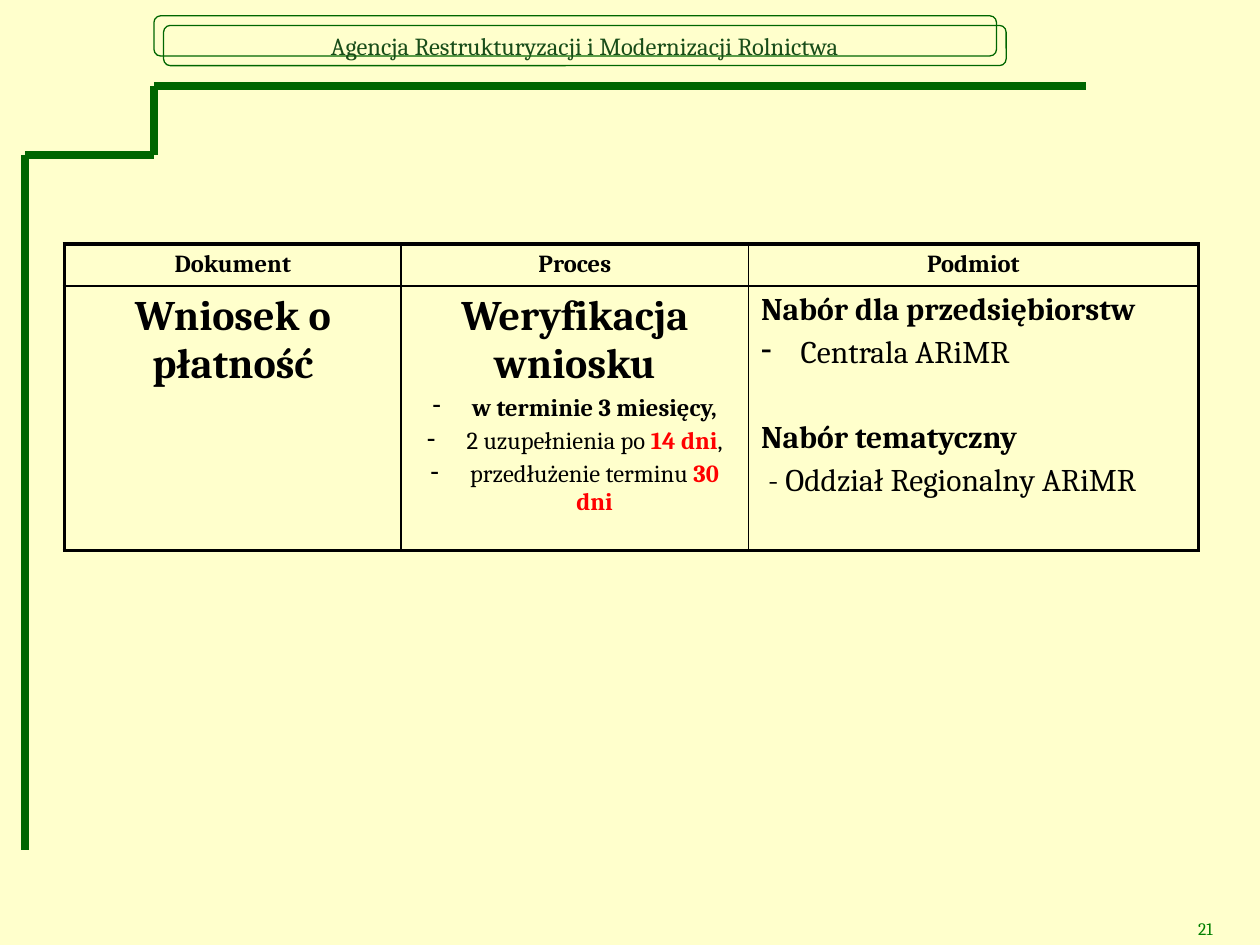
"""Builds the payment application slide with its process table."""
import pptx
import pptx.dml.color
import pptx.enum.shapes
import pptx.enum.text
import pptx.oxml
import pptx.oxml.ns
import pptx.util

Pt = pptx.util.Pt
ALIGN = pptx.enum.text.PP_ALIGN
FONT = "Cambria"
GREEN, BLACK, RED = "006600", "000000", "FF0000"

AGENCY = "Agencja Restrukturyzacji i Modernizacji Rolnictwa"
PAGE_NUMBER = "21"
FRAME_LINES = [
    (88, 49, 620.5, 49),
    (14.5, 88.5, 14.5, 485.5),
    (14.5, 88.5, 88, 88.5),
    (88, 88.5, 88, 49),
]
BANNERS = [(88, 9, ""), (93.5, 14.5, AGENCY)]
BANNER_SIZE = (481.5, 23)

TABLE_PLACE = (36.8, 139.5)
COLUMN_WIDTHS = [192.5, 198.5, 257]
ROW_HEIGHTS = [24, 151]
OUTER_BORDER, INNER_BORDER = 2.25, 1
HEADINGS = ["Dokument", "Proces", "Podmiot"]


def entry(size, *spans, align=ALIGN.CENTER, bullet=False, indent=0, gap=0.2):
    """Describe a paragraph; spans are (text, bold, colour), gap is in font sizes."""
    return dict(size=size, spans=spans, align=align, bullet=bullet, indent=indent, gap=gap)


DETAILS = [
    [entry(24, ("Wniosek o płatność", True, BLACK))],
    [
        entry(24, ("Weryfikacja wniosku", True, BLACK)),
        entry(14, ("w terminie 3 miesięcy,", True, BLACK), bullet=True),
        entry(14, ("2 uzupełnienia po ", False, BLACK), ("14 dni", True, RED),
              (",", False, BLACK), bullet=True),
        entry(14, ("przedłużenie terminu ", False, BLACK), ("30 dni", True, RED), bullet=True),
    ],
    [
        entry(18, ("Nabór dla przedsiębiorstw", True, BLACK), align=ALIGN.LEFT),
        entry(18, ("Centrala ARiMR", False, BLACK), align=ALIGN.LEFT, bullet=True),
        entry(18, ("Nabór tematyczny", True, BLACK), align=ALIGN.LEFT, gap=1.55),
        entry(18, ("- Oddział Regionalny ARiMR", False, BLACK), align=ALIGN.LEFT, indent=4),
    ],
]
ROWS = [[[entry(14, (heading, True, BLACK))] for heading in HEADINGS], DETAILS]


def colour(hex_value):
    return pptx.dml.color.RGBColor.from_string(hex_value)


def element(tag, **attributes):
    made = pptx.oxml.parse_xml(f"<a:{tag} {pptx.oxml.ns.nsdecls('a')}/>")
    for name, value in attributes.items():
        made.set(name, str(value))
    return made


def write(frame, entries):
    for position, item in enumerate(entries):
        para = frame.add_paragraph() if position else frame.paragraphs[0]
        para.alignment = item["align"]
        if position:
            para.space_before = Pt(round(item["gap"] * item["size"], 1))
        properties = para._p.get_or_add_pPr()
        if item["bullet"]:
            properties.set("marL", str(Pt(22.5)))
            properties.set("indent", str(-Pt(22.5)))
            properties.append(element("buFontTx"))
            properties.append(element("buChar", char="-"))
        elif item["indent"]:
            properties.set("marL", str(Pt(item["indent"])))
        for text, bold, hex_value in item["spans"]:
            span = para.add_run()
            span.text = text
            span.font.name = FONT
            span.font.size = Pt(item["size"])
            span.font.bold = bold
            span.font.color.rgb = colour(hex_value)


def add_frame_line(page, ends):
    line = page.shapes.add_connector(
        pptx.enum.shapes.MSO_CONNECTOR.STRAIGHT, *map(Pt, ends))
    line.line.color.rgb = colour(GREEN)
    line.line.width = Pt(4.5)
    line._element.spPr.append(element("effectLst"))


def add_banner(page, left, top, text):
    box = page.shapes.add_shape(
        pptx.enum.shapes.MSO_SHAPE.ROUNDED_RECTANGLE,
        *map(Pt, (left, top, *BANNER_SIZE)))
    box.shadow.inherit = False
    box.fill.background()
    box.line.color.rgb = colour(GREEN)
    box.line.width = Pt(0.75)
    if text:
        box.text_frame.word_wrap = False
        box.text_frame.vertical_anchor = pptx.enum.text.MSO_ANCHOR.MIDDLE
        write(box.text_frame, [entry(14, (text, False, "194D19"))])


def set_borders(cell, row, column):
    edges = {
        "lnL": column == 0,
        "lnR": column == len(COLUMN_WIDTHS) - 1,
        "lnT": row == 0,
        "lnB": row == len(ROW_HEIGHTS) - 1,
    }
    properties = cell._tc.get_or_add_tcPr()
    for tag, outer in edges.items():
        border = element(tag, w=Pt(OUTER_BORDER if outer else INNER_BORDER))
        fill = element("solidFill")
        fill.append(element("srgbClr", val=BLACK))
        border.append(fill)
        properties.append(border)


def add_process_table(page):
    table = page.shapes.add_table(
        len(ROW_HEIGHTS), len(COLUMN_WIDTHS),
        *map(Pt, (*TABLE_PLACE, sum(COLUMN_WIDTHS), sum(ROW_HEIGHTS)))).table
    table.first_row = table.horz_banding = False
    for column, width in zip(table.columns, COLUMN_WIDTHS):
        column.width = Pt(width)
    for row, height in zip(table.rows, ROW_HEIGHTS):
        row.height = Pt(height)
    for row, contents in enumerate(ROWS):
        for column, entries in enumerate(contents):
            cell = table.cell(row, column)
            set_borders(cell, row, column)
            cell.fill.background()
            write(cell.text_frame, entries)


def main():
    deck = pptx.Presentation()
    deck.slide_width, deck.slide_height = Pt(720), Pt(540)
    page = deck.slides.add_slide(deck.slide_layouts[6])
    page.background.fill.solid()
    page.background.fill.fore_color.rgb = colour("FFFFCC")
    for ends in FRAME_LINES:
        add_frame_line(page, ends)
    for left, top, text in BANNERS:
        add_banner(page, left, top, text)
    number = page.shapes.add_textbox(*map(Pt, (490.5, 521, 209.5, 21)))
    number.text_frame.word_wrap = True
    write(number.text_frame, [entry(10, (PAGE_NUMBER, False, "008000"), align=ALIGN.RIGHT)])
    add_process_table(page)
    deck.save("out.pptx")


if __name__ == "__main__":
    main()
